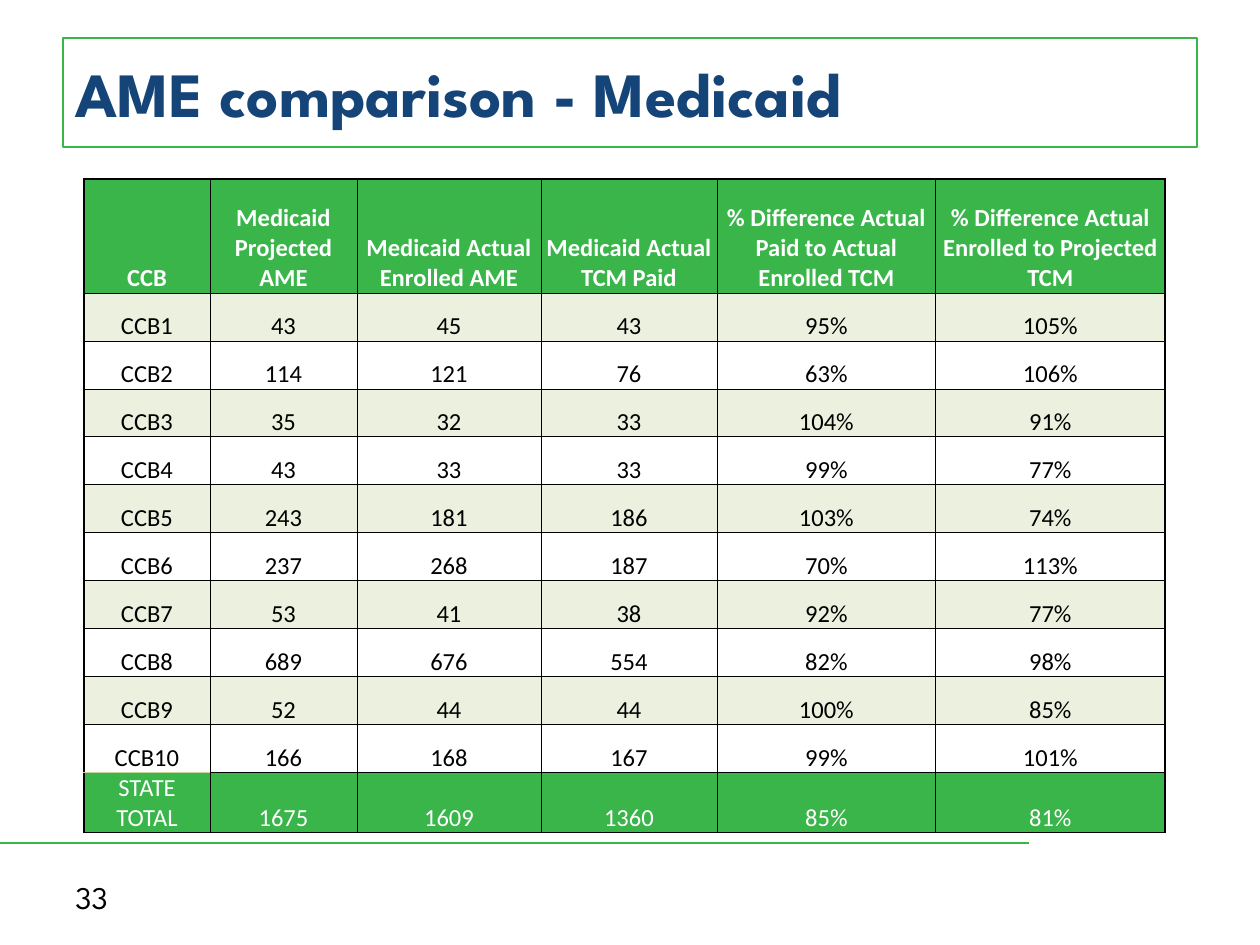
import lxml.etree
import pptx
import pptx.dml.color
import pptx.enum.shapes
import pptx.enum.text
import pptx.oxml.ns
import pptx.util

# Content
TITLE = "AME comparison - Medicaid"
PAGE_NUMBER = "33"
ROWS = [
    ("CCB", "Medicaid Projected AME", "Medicaid Actual Enrolled AME",
     "Medicaid Actual TCM Paid", "% Difference Actual Paid to Actual Enrolled TCM",
     "% Difference Actual Enrolled to Projected TCM"),
    ("CCB1", "43", "45", "43", "95%", "105%"),
    ("CCB2", "114", "121", "76", "63%", "106%"),
    ("CCB3", "35", "32", "33", "104%", "91%"),
    ("CCB4", "43", "33", "33", "99%", "77%"),
    ("CCB5", "243", "181", "186", "103%", "74%"),
    ("CCB6", "237", "268", "187", "70%", "113%"),
    ("CCB7", "53", "41", "38", "92%", "77%"),
    ("CCB8", "689", "676", "554", "82%", "98%"),
    ("CCB9", "52", "44", "44", "100%", "85%"),
    ("CCB10", "166", "168", "167", "99%", "101%"),
    ("STATE TOTAL", "1675", "1609", "1360", "85%", "81%"),
]
COLUMN_WIDTHS = [126, 147, 184, 176, 219, 229]
HEADER_HEIGHT, ROW_HEIGHT = 114, 48
GREEN, PALE, NAVY, WHITE, BLACK = "39B54A", "EBF1DE", "154578", "FFFFFF", "000000"
TOTAL_RULE = "C4D79B"
HEADING_FONT, TABLE_FONT = "League Spartan", "Calibri"


def px(length):
    return pptx.util.Emu(round(length * 914400 / 126))


def rgb(value):
    return pptx.dml.color.RGBColor.from_string(value)


def style_text(frame, font, size, color, bold=False):
    for para in frame.paragraphs:
        for span in para.runs:
            span.font.name = font
            span.font.size = pptx.util.Pt(size)
            span.font.bold = bold
            span.font.color.rgb = rgb(color)


def add_border(cell, side, color, points):
    qn = pptx.oxml.ns.qn
    line = lxml.etree.SubElement(cell._tc.get_or_add_tcPr(), qn("a:ln" + side),
                                 w=str(pptx.util.Pt(points)))
    fill = lxml.etree.SubElement(line, qn("a:solidFill"))
    lxml.etree.SubElement(fill, qn("a:srgbClr"), val=color)


def format_cell(cell, row, column):
    last_row, last_column = len(ROWS) - 1, len(COLUMN_WIDTHS) - 1
    # Outer edges are thicker; a light rule sits above the total's label
    outer = {"L": column == 0, "R": column == last_column,
             "T": row == 0, "B": row == last_row}
    light = {"B": last_row - 1, "T": last_row}
    for side, is_outer in outer.items():
        is_light = column == 0 and light.get(side) == row
        add_border(cell, side, TOTAL_RULE if is_light else BLACK, 1 if is_outer else 0.5)

    is_green = row in (0, last_row)
    if is_green or row % 2:
        cell.fill.solid()
        cell.fill.fore_color.rgb = rgb(GREEN if is_green else PALE)
    else:
        cell.fill.background()

    cell.margin_left = cell.margin_right = cell.margin_top = px(1)
    cell.margin_bottom = 0
    cell.vertical_anchor = pptx.enum.text.MSO_ANCHOR.BOTTOM
    cell.text_frame.text = ROWS[row][column]
    cell.text_frame.paragraphs[0].alignment = pptx.enum.text.PP_ALIGN.CENTER
    style_text(cell.text_frame, TABLE_FONT, 14, WHITE if is_green else BLACK, row == 0)


def main():
    deck = pptx.Presentation()
    deck.slide_width, deck.slide_height = px(1260), px(945)
    page = deck.slides.add_slide(deck.slide_layouts[5])

    # Footer rule
    rule = page.shapes.add_connector(pptx.enum.shapes.MSO_CONNECTOR.STRAIGHT,
                                     0, px(843), px(1029), px(843))
    rule.line.color.rgb = rgb(GREEN)
    rule.line.width = pptx.util.Pt(1.5)
    lxml.etree.SubElement(rule._element.spPr, pptx.oxml.ns.qn("a:effectLst"))

    # Page number
    number = page.shapes.add_textbox(px(63), px(872), px(294), px(50))
    number.text_frame.word_wrap = True
    number.text_frame.vertical_anchor = pptx.enum.text.MSO_ANCHOR.MIDDLE
    number.text_frame.text = PAGE_NUMBER
    style_text(number.text_frame, HEADING_FONT, 18, BLACK)

    # Title
    title = page.shapes.title
    title.left, title.top, title.width, title.height = px(63), px(38), px(1134), px(109)
    title.line.color.rgb = rgb(GREEN)
    title.line.width = pptx.util.Pt(1)
    title.text_frame.text = TITLE
    title.text_frame.vertical_anchor = pptx.enum.text.MSO_ANCHOR.MIDDLE
    title.text_frame.paragraphs[0].alignment = pptx.enum.text.PP_ALIGN.LEFT
    style_text(title.text_frame, HEADING_FONT, 36, NAVY, True)

    # Comparison table
    height = HEADER_HEIGHT + ROW_HEIGHT * (len(ROWS) - 1)
    table = page.shapes.add_table(len(ROWS), len(COLUMN_WIDTHS), px(84), px(179),
                                  px(sum(COLUMN_WIDTHS)), px(height)).table
    table.first_row = table.horz_banding = False
    for column, width in enumerate(COLUMN_WIDTHS):
        table.columns[column].width = px(width)
    for row in range(len(ROWS)):
        table.rows[row].height = px(ROW_HEIGHT if row else HEADER_HEIGHT)
        for column in range(len(COLUMN_WIDTHS)):
            format_cell(table.cell(row, column), row, column)

    deck.save("out.pptx")


if __name__ == "__main__":
    main()
